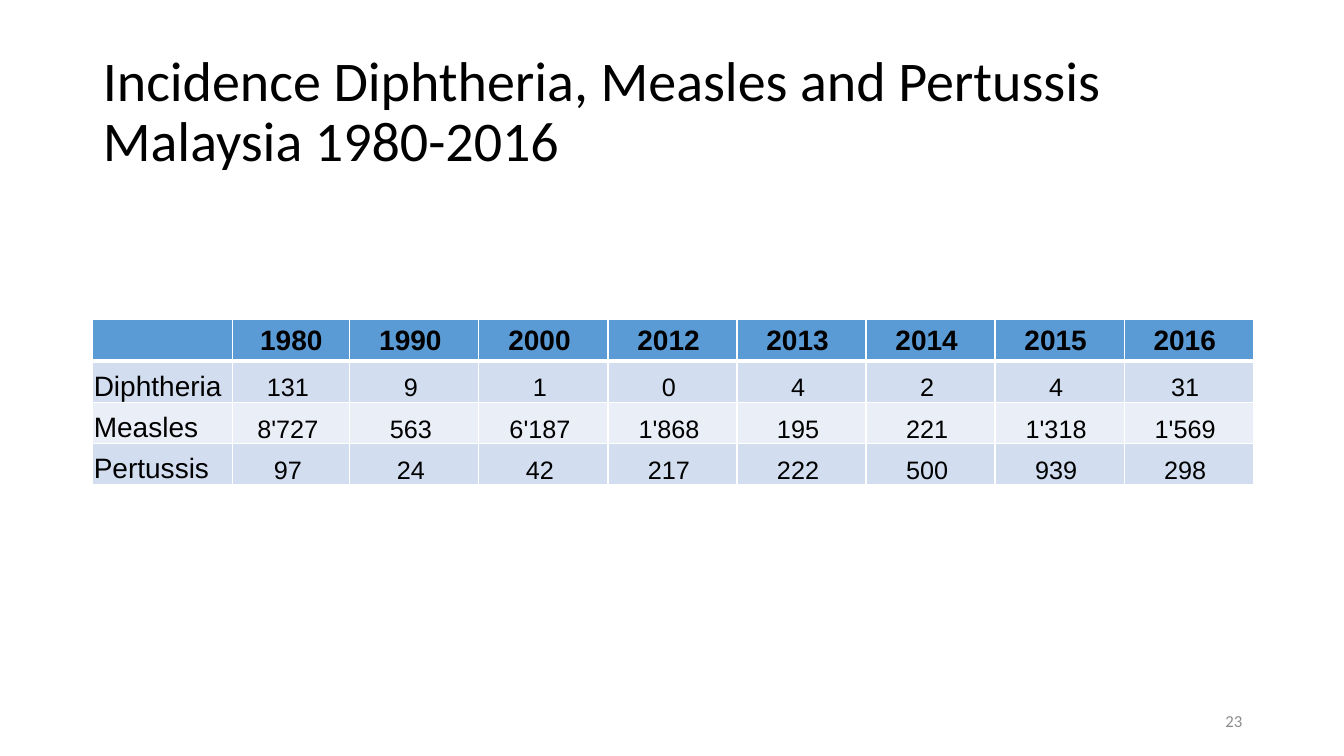
from lxml.etree import SubElement
from pptx import Presentation
from pptx.dml.color import RGBColor
from pptx.enum.text import MSO_ANCHOR as Anchor, MSO_AUTO_SIZE as AutoSize, PP_ALIGN as Align
from pptx.oxml.ns import qn
from pptx.util import Pt

PX = 9144
NBSP = chr(160)
TITLE = "Incidence Diphtheria, Measles and Pertussis\vMalaysia 1980-2016"
PAGE = "23"
ROWS = [
    ["", "1980", "1990", "2000", "2012", "2013", "2014", "2015", "2016"],
    ["Diphtheria", "131", "9", "1", "0", "4", "2", "4", "31"],
    ["Measles", "8'727", "563", "6'187", "1'868", "195", "221", "1'318", "1'569"],
    ["Pertussis", "97", "24", "42", "217", "222", "500", "939", "298"],
]
COLUMN_WIDTHS = [139, 116] + [128] * 7
ROW_HEIGHT = 41
HEADER_FILL, BAND_FILLS = "5B9BD5", ("EAEFF7", "D2DEEF")
BLACK, WHITE, GREY = "000000", "FFFFFF", "8C8C8C"


def color(value):
    return RGBColor.from_string(value)


def px(*lengths):
    return [length * PX for length in lengths]


def place(shape, *box):
    shape.left, shape.top, shape.width, shape.height = px(*box)


def style(paragraph, name, size, fill, align, bold=False):
    paragraph.alignment = align
    font = paragraph.font
    font.name, font.size, font.bold = name, Pt(size), bold
    font.color.rgb = color(fill)


def add_borders(cell, row):
    widths = {"lnL": 1, "lnR": 1, "lnT": 3 if row == 1 else 1, "lnB": 3 if row == 0 else 1}
    properties = cell._tc.get_or_add_tcPr()
    for side, width in widths.items():
        line = SubElement(properties, qn(f"a:{side}"), w=str(Pt(width)))
        SubElement(SubElement(line, qn("a:solidFill")), qn("a:srgbClr"), val=WHITE)


def fill_cell(cell, row, column, text):
    header, label = row == 0, column == 0
    add_borders(cell, row)
    cell.fill.solid()
    cell.fill.fore_color.rgb = color(HEADER_FILL if header else BAND_FILLS[row % 2])
    cell.margin_left, cell.margin_top, cell.margin_right, cell.margin_bottom = px(1, 1, 1, 0)
    cell.vertical_anchor = Anchor.MIDDLE if header else Anchor.BOTTOM
    cell.text = text if label or text == "1980" else text + NBSP
    style(cell.text_frame.paragraphs[0], "Arial", 20 if header or label else 18, BLACK,
          Align.LEFT if label else Align.CENTER, header)


def add_title(slide):
    title = slide.shapes.title
    place(title, 92, 40, 1150, 145)
    frame = title.text_frame
    frame.text = TITLE
    frame.auto_size, frame.vertical_anchor = AutoSize.NONE, Anchor.MIDDLE
    paragraph = frame.paragraphs[0]
    paragraph.line_spacing = 0.9
    style(paragraph, "Calibri", 40, BLACK, Align.LEFT)


def add_incidence_table(slide):
    box = px(92, 317, sum(COLUMN_WIDTHS), ROW_HEIGHT * len(ROWS))
    table = slide.shapes.add_table(len(ROWS), len(COLUMN_WIDTHS), *box).table
    for column, width in zip(table.columns, COLUMN_WIDTHS):
        column.width = width * PX
    for row, texts in enumerate(ROWS):
        table.rows[row].height = ROW_HEIGHT * PX
        for column, text in enumerate(texts):
            fill_cell(table.cell(row, column), row, column, text)


def add_page_number(slide):
    frame = slide.shapes.add_textbox(*px(942, 695, 300, 40)).text_frame
    frame.word_wrap, frame.vertical_anchor = True, Anchor.MIDDLE
    frame.text = PAGE
    style(frame.paragraphs[0], "Calibri", 12, GREY, Align.RIGHT)


def main():
    """Build the disease incidence slide and save it."""
    presentation = Presentation()
    presentation.slide_width, presentation.slide_height = px(1333, 750)
    slide = presentation.slides.add_slide(presentation.slide_layouts[5])
    add_title(slide)
    add_incidence_table(slide)
    add_page_number(slide)
    presentation.save("out.pptx")


if __name__ == "__main__":
    main()
